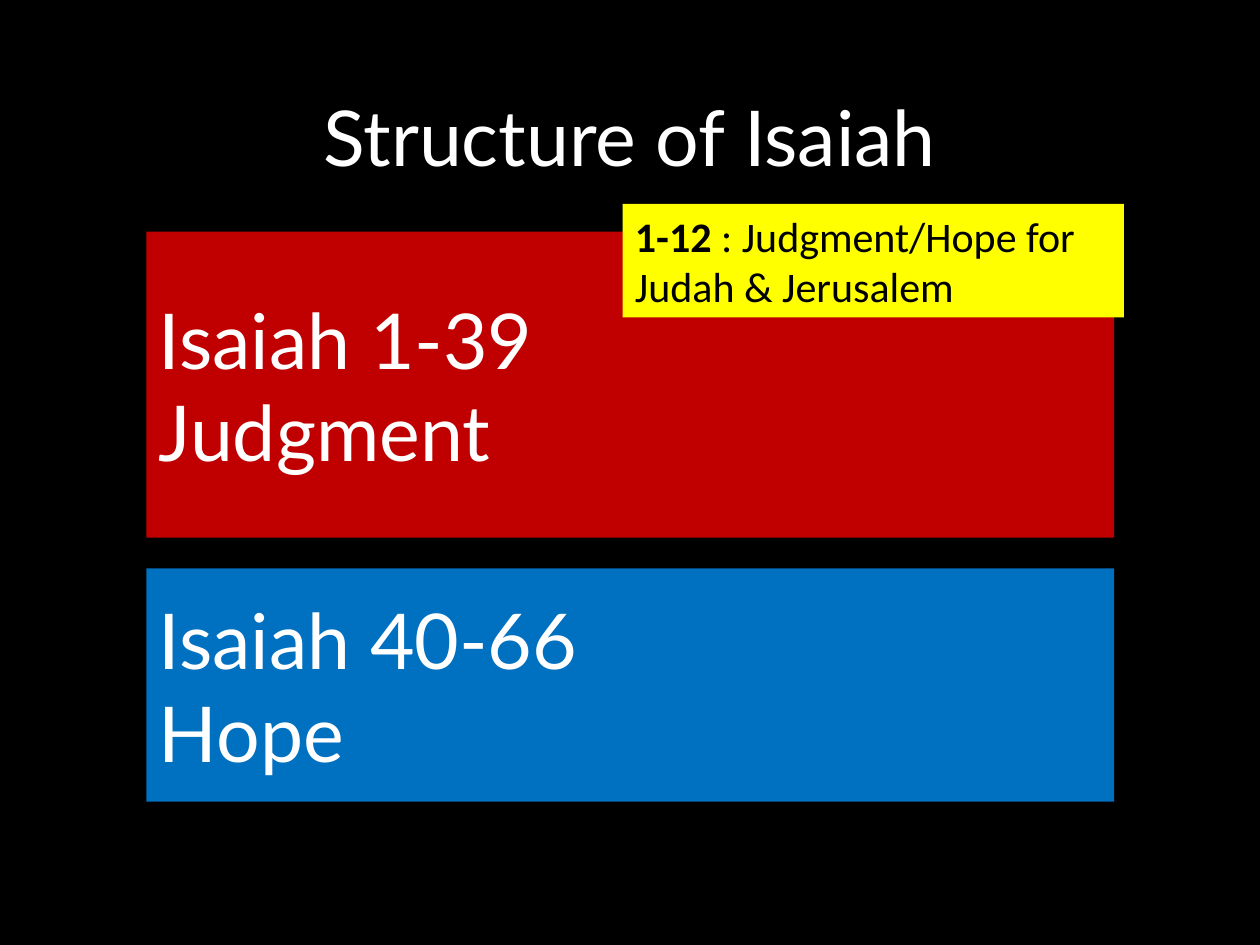
from pptx import Presentation
from pptx.dml.color import RGBColor
from pptx.enum.shapes import MSO_SHAPE
from pptx.enum.text import MSO_ANCHOR, PP_ALIGN
from pptx.util import Cm, Pt

BLACK = RGBColor(0x00, 0x00, 0x00)
WHITE = RGBColor(0xFF, 0xFF, 0xFF)
RED = RGBColor(0xC0, 0x00, 0x00)
BLUE = RGBColor(0x00, 0x70, 0xC0)
YELLOW = RGBColor(0xFF, 0xFF, 0x00)


class StructureSlide:
    """Holds the style and the slide that shows the structure of a book."""

    heading_font, note_font = "Lato", "Calibri"
    heading_size, note_size = Pt(44), Pt(24)
    section_left, section_width = Cm(2.95), Cm(19.51)

    def __init__(self, presentation):
        self.slide = presentation.slides.add_slide(presentation.slide_layouts[5])
        background = self.slide.background.fill
        background.solid()
        background.fore_color.rgb = BLACK

    def format_runs(self, paragraph, font_name, size, color):
        for run in paragraph.runs:
            run.font.name = font_name
            run.font.size = size
            run.font.color.rgb = color

    def add_title(self, wording):
        heading = self.slide.shapes.title
        heading.left, heading.top = Cm(1.75), Cm(1.02)
        heading.width, heading.height = Cm(21.9), Cm(3.68)
        heading.text_frame.text = wording
        heading.text_frame.vertical_anchor = MSO_ANCHOR.MIDDLE
        paragraph = heading.text_frame.paragraphs[0]
        paragraph.alignment = PP_ALIGN.CENTER
        paragraph.line_spacing = 0.9
        self.format_runs(paragraph, self.heading_font, self.heading_size, WHITE)

    def add_block(self, left, top, width, height, color, anchor):
        panel = self.slide.shapes.add_shape(MSO_SHAPE.RECTANGLE, left, top, width, height)
        panel.shadow.inherit = False
        panel.fill.solid()
        panel.fill.fore_color.rgb = color
        panel.line.fill.background()
        panel.text_frame.word_wrap = True
        panel.text_frame.vertical_anchor = anchor
        return panel.text_frame

    def add_section(self, top, height, color, chapters, theme):
        frame = self.add_block(
            self.section_left, top, self.section_width, height, color, MSO_ANCHOR.MIDDLE
        )
        frame.text = f"{chapters}\n{theme}"
        for paragraph in frame.paragraphs:
            paragraph.alignment = PP_ALIGN.LEFT
            self.format_runs(paragraph, self.heading_font, self.heading_size, WHITE)

    def add_note(self, chapters, summary):
        frame = self.add_block(
            Cm(12.55), Cm(4.11), Cm(10.11), Cm(2.29), YELLOW, MSO_ANCHOR.TOP
        )
        paragraph = frame.paragraphs[0]
        paragraph.alignment = PP_ALIGN.LEFT
        for wording, bold in ((chapters, True), (summary, False)):
            run = paragraph.add_run()
            run.text = wording
            run.font.bold = bold
        self.format_runs(paragraph, self.note_font, self.note_size, BLACK)


def main():
    presentation = Presentation()
    presentation.slide_width, presentation.slide_height = Cm(25.4), Cm(19.05)
    structure = StructureSlide(presentation)
    structure.add_title("Structure of Isaiah")
    structure.add_section(Cm(4.67), Cm(6.17), RED, "Isaiah 1-39", "Judgment")
    structure.add_section(Cm(11.46), Cm(4.7), BLUE, "Isaiah 40-66", "Hope")
    structure.add_note("1-12", " : Judgment/Hope for Judah & Jerusalem")
    presentation.save("out.pptx")


if __name__ == "__main__":
    main()
